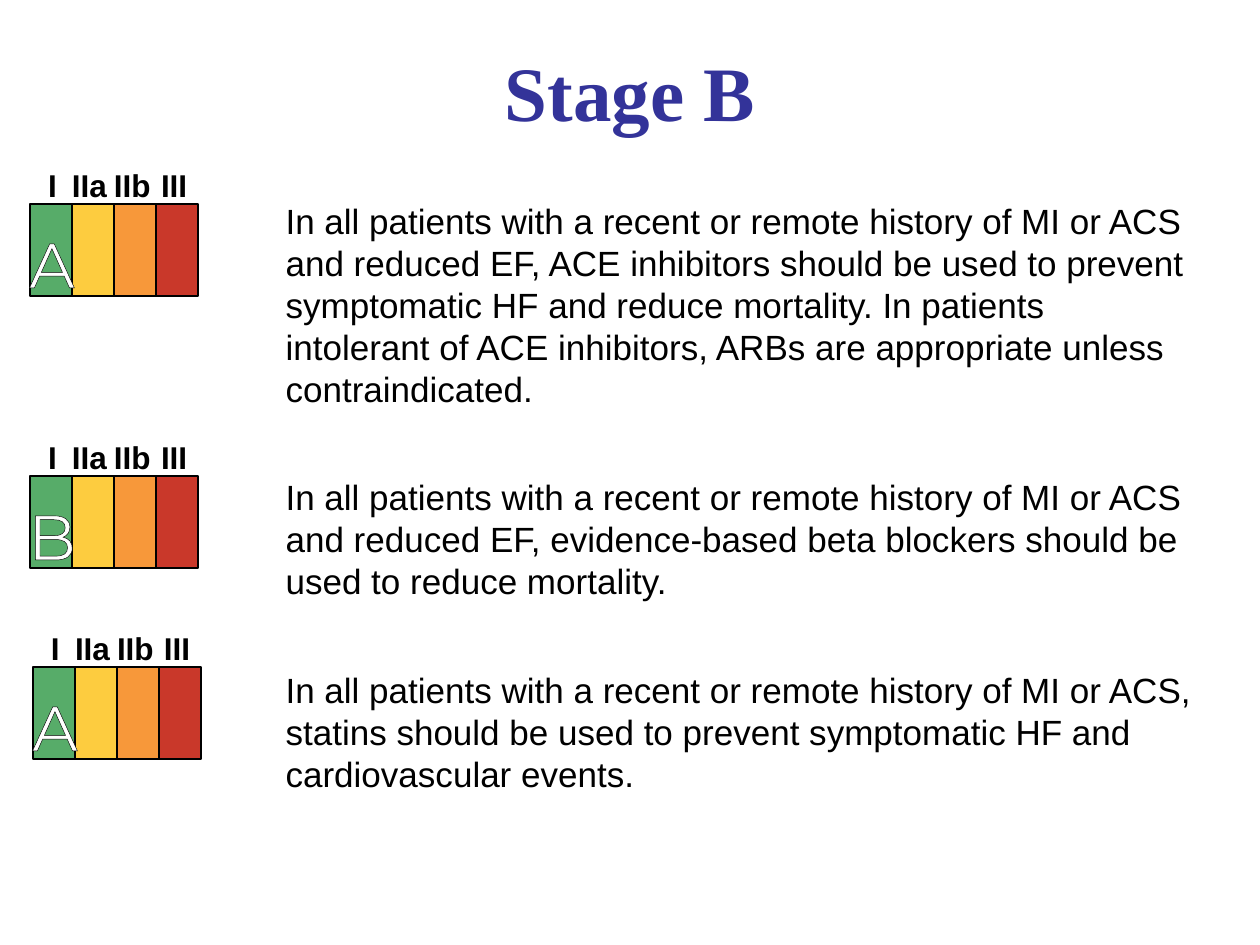
from lxml import etree
from pptx import Presentation
from pptx.dml.color import RGBColor
from pptx.enum.shapes import MSO_SHAPE
from pptx.enum.text import MSO_ANCHOR, MSO_AUTO_SIZE, PP_ALIGN
from pptx.oxml.ns import qn
from pptx.util import Pt

RECT = MSO_SHAPE.RECTANGLE
TOP, MIDDLE = MSO_ANCHOR.TOP, MSO_ANCHOR.MIDDLE
NO_FIT = MSO_AUTO_SIZE.NONE
LEFT, CENTER = PP_ALIGN.LEFT, PP_ALIGN.CENTER

PX = 914400 / 126
COLORS = {
    "title": "333399", "ink": "000000", "letter": "FFFFFF",
    "I": "57AC69", "IIa": "FDCC3F", "IIb": "F7983A", "III": "C9382A",
}
FORMATS = {
    "title": {"name": "Times New Roman", "size": Pt(44), "bold": True},
    "body": {"name": "Arial", "size": Pt(20), "bold": False},
    "label": {"name": "Arial", "size": Pt(18), "bold": True},
    "letter": {"name": "Montserrat", "size": Pt(36), "bold": False},
}

RECOMMENDATIONS = [
    "In all patients with a recent or remote history of MI or ACS and reduced EF, "
    "ACE inhibitors should be used to prevent symptomatic HF and reduce mortality. "
    "In patients intolerant of ACE inhibitors, ARBs are appropriate unless "
    "contraindicated.",
    "In all patients with a recent or remote history of MI or ACS and reduced EF, "
    "evidence-based beta blockers should be used to reduce mortality.",
    "In all patients with a recent or remote history of MI or ACS, statins should be "
    "used to prevent symptomatic HF and cardiovascular events.",
]
# Evidence level and box of each class scale, labels included
SCALES = [
    ("A", (30, 166, 168, 130)),
    ("B", (30, 438, 168, 130)),
    ("A", (33, 629, 168, 130)),
]
# Class of recommendation: label offset from its column
CLASSES = {"I": 18, "IIa": 0, "IIb": 0, "III": 5}
LABEL_W, LABEL_H = 42, 38


def px(n):
    return round(n * PX)


def rgb(name):
    return RGBColor.from_string(COLORS[name])


def place(sp, box):
    sp.left, sp.top, sp.width, sp.height = map(px, box)


def write(p, text, style, color, align=LEFT):
    p.alignment = align
    r = p.add_run()
    r.text = text
    for key, value in FORMATS[style].items():
        setattr(r.font, key, value)
    r.font.color.rgb = rgb(color)
    return r


def add_title(slide, box):
    sp = slide.shapes.title
    place(sp, box)
    tf = sp.text_frame
    tf.vertical_anchor = MIDDLE
    tf.margin_bottom = px(58)
    write(tf.paragraphs[0], "Stage B", "title", "title", CENTER)


def add_recommendations(slide, box):
    sp = slide.placeholders[1]
    place(sp, box)
    tf = sp.text_frame
    tf.vertical_anchor = TOP
    tf.auto_size = NO_FIT
    for i, text in enumerate(RECOMMENDATIONS):
        p = tf.add_paragraph() if i else tf.paragraphs[0]
        p.line_spacing = Pt(24)
        p.space_before = Pt(38 if i else 0)
        pPr = p._p.get_or_add_pPr()
        pPr.set("marL", "0")
        pPr.set("indent", "0")
        etree.SubElement(pPr, qn("a:buNone"))
        write(p, text, "body", "ink")


def outline_text(r, color, width):
    rPr = r._r.get_or_add_rPr()
    ln = etree.Element(qn("a:ln"), w=str(width))
    fill = etree.SubElement(ln, qn("a:solidFill"))
    etree.SubElement(fill, qn("a:srgbClr"), val=COLORS[color])
    rPr.insert(0, ln)


def add_label(shapes, box, text, style, color, align=LEFT):
    """Add a text box without margins."""
    tf = shapes.add_textbox(*map(px, box)).text_frame
    tf.word_wrap = True
    for side in ("left", "top", "right", "bottom"):
        setattr(tf, f"margin_{side}", 0)
    return write(tf.paragraphs[0], text, style, color, align)


def add_class_scale(slide, level, box):
    """Draw the four class columns with their labels and the evidence level."""
    x, y, w, h = box
    shapes = slide.shapes.add_group_shape().shapes
    col_w = w / len(CLASSES)
    bar_y = y + LABEL_H

    for i, (name, dx) in enumerate(CLASSES.items()):
        col_x = x + i * col_w
        sp = shapes.add_shape(RECT, px(col_x), px(bar_y),
                              px(col_w), px(h - LABEL_H))
        sp.shadow.inherit = False
        sp.fill.solid()
        sp.fill.fore_color.rgb = rgb(name)
        sp.line.color.rgb = rgb("ink")
        sp.line.width = Pt(1.5)
        add_label(shapes, (col_x + dx, y, LABEL_W, LABEL_H), name, "label", "ink")

    r = add_label(shapes, (x - 8, bar_y + 21, 60, 78), level,
                  "letter", "letter", CENTER)
    outline_text(r, "ink", Pt(0.75))


def main():
    prs = Presentation()
    prs.slide_width, prs.slide_height = px(1260), px(945)
    slide = prs.slides.add_slide(prs.slide_layouts[1])
    add_title(slide, (63, 38, 1134, 158))
    add_recommendations(slide, (273, 193, 935, 464))
    for level, box in SCALES:
        add_class_scale(slide, level, box)
    prs.save("out.pptx")


if __name__ == "__main__":
    main()
